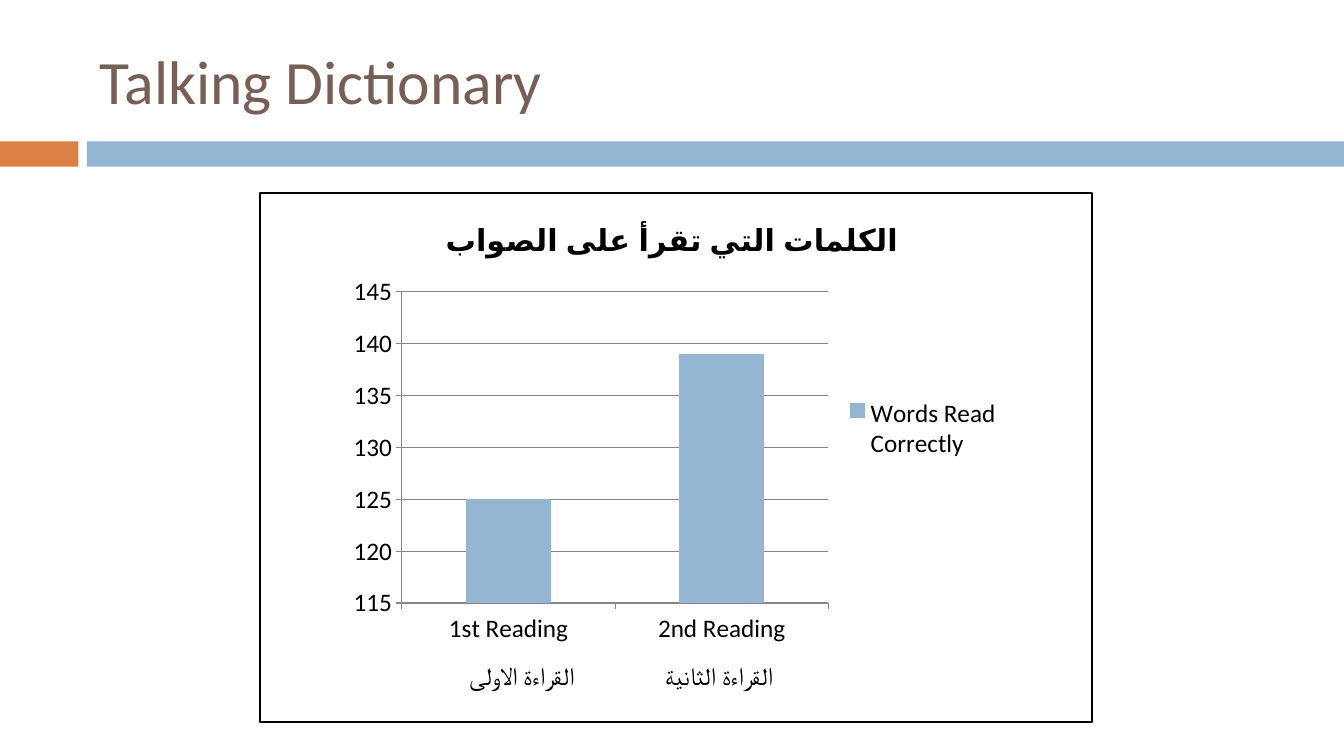
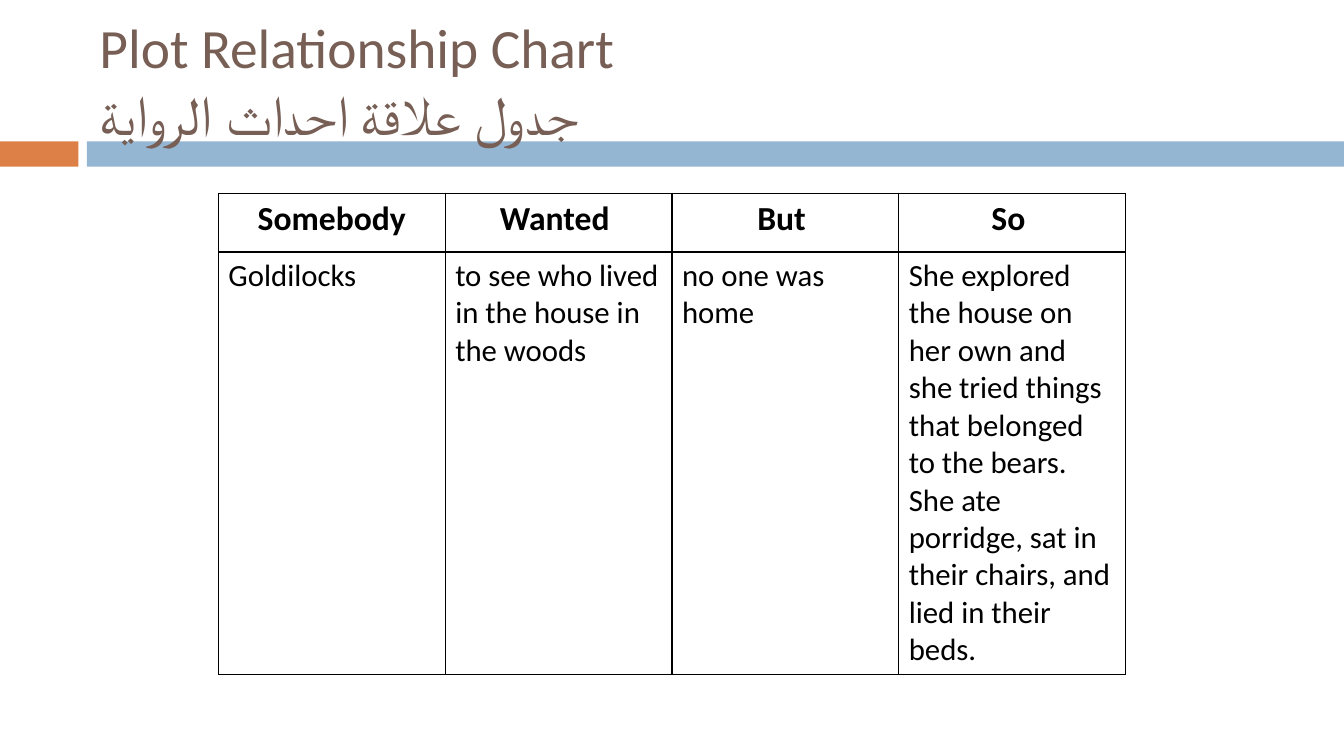
from lxml import etree
from pptx import Presentation
from pptx.chart.data import CategoryChartData
from pptx.dml.color import RGBColor
from pptx.enum import chart as charts, shapes, text
from pptx.oxml import ns
from pptx.util import Pt

BLACK = RGBColor(0x00, 0x00, 0x00)
BROWN = RGBColor(0x77, 0x5F, 0x55)
ORANGE = RGBColor(0xDD, 0x80, 0x47)
BLUE = RGBColor(0x94, 0xB6, 0xD2)
GRAY = RGBColor(0x86, 0x86, 0x86)

LATIN, ARABIC = "Calibri", "Arial"
SLIDE_WIDTH, SLIDE_HEIGHT = 960, 540
BAND_TOP, BAND_HEIGHT = 101, 18
BAND_SPLIT, BAND_GAP = 56, 6
CONTENT_TOP = 138


def box(left, top, width, height):
    return Pt(left), Pt(top), Pt(width), Pt(height)


def set_attributes(target, values):
    for name, value in values.items():
        setattr(target, name, value)


def format_font(font, size, color=BLACK, bold=False, name=LATIN):
    set_attributes(font, {"size": Pt(size), "bold": bold, "name": name})
    font.color.rgb = color


def add_rectangle(slide, bounds, fill=None, line=None, line_width=1.5):
    shape = slide.shapes.add_shape(shapes.MSO_SHAPE.RECTANGLE, *box(*bounds))
    shape.shadow.inherit = False
    if fill is None:
        shape.fill.background()
    else:
        shape.fill.solid()
        shape.fill.fore_color.rgb = fill
    if line is None:
        shape.line.fill.background()
    else:
        shape.line.color.rgb = line
        shape.line.width = Pt(line_width)


def add_text(slide, bounds, lines, size, color=BLACK, anchor=text.MSO_ANCHOR.TOP):
    """Write (wording, font name) lines into one paragraph."""
    frame = slide.shapes.add_textbox(*box(*bounds)).text_frame
    set_attributes(frame, {"word_wrap": True, "vertical_anchor": anchor})
    paragraph = frame.paragraphs[0]
    for index, (wording, font_name) in enumerate(lines):
        if index:
            paragraph.add_line_break()
        run = paragraph.add_run()
        run.text = wording
        format_font(run.font, size, color, name=font_name)


def add_titled_slide(presentation, title_lines, size):
    slide = presentation.slides.add_slide(presentation.slide_layouts[6])
    blue_left = BAND_SPLIT + BAND_GAP
    add_rectangle(slide, (0, BAND_TOP, BAND_SPLIT, BAND_HEIGHT), ORANGE)
    add_rectangle(slide, (blue_left, BAND_TOP, SLIDE_WIDTH - blue_left, BAND_HEIGHT), BLUE)
    add_text(slide, (64, 18, 856, 78), title_lines, size, BROWN, text.MSO_ANCHOR.MIDDLE)
    return slide


def add_column_chart(slide, bounds, title, categories, series_name, values):
    data = CategoryChartData()
    data.categories = categories
    data.add_series(series_name, values)
    chart = slide.shapes.add_chart(
        charts.XL_CHART_TYPE.COLUMN_CLUSTERED, *box(*bounds), data).chart
    format_font(chart.font, 18)

    chart.has_title = True
    chart.chart_title.text_frame.text = title
    chart.chart_title.include_in_layout = False
    format_font(chart.chart_title.text_frame.paragraphs[0].runs[0].font, 21.6, bold=True)

    chart.has_legend = True
    set_attributes(chart.legend, {
        "position": charts.XL_LEGEND_POSITION.RIGHT, "include_in_layout": False})

    plot = chart.plots[0]
    set_attributes(plot, {"gap_width": 150, "vary_by_categories": False})
    fill = plot.series[0].format.fill
    fill.solid()
    fill.fore_color.rgb = BLUE

    value_axis, category_axis = chart.value_axis, chart.category_axis
    set_attributes(value_axis, {
        "minimum_scale": 115, "maximum_scale": 145, "major_unit": 5,
        "has_major_gridlines": True})
    for axis in (value_axis, category_axis):
        axis.major_tick_mark = charts.XL_TICK_MARK.OUTSIDE
    for ruled in (value_axis, category_axis, value_axis.major_gridlines):
        ruled.format.line.color.rgb = GRAY
        ruled.format.line.width = Pt(0.75)


def add_cell_borders(cell, color=BLACK, width=1):
    properties = cell._tc.get_or_add_tcPr()
    for index, side in enumerate(("lnL", "lnR", "lnT", "lnB")):
        line = etree.Element(ns.qn(f"a:{side}"), w=str(Pt(width)))
        fill = etree.SubElement(line, ns.qn("a:solidFill"))
        etree.SubElement(fill, ns.qn("a:srgbClr"), val=str(color))
        properties.insert(index, line)


def add_table(slide, left, top, column_width, row_heights, rows):
    columns = len(rows[0])
    bounds = box(left, top, column_width * columns, sum(row_heights))
    table = slide.shapes.add_table(len(rows), columns, *bounds).table
    set_attributes(table, {"first_row": False, "horz_banding": False})
    for row_index, (height, wordings) in enumerate(zip(row_heights, rows)):
        table.rows[row_index].height = Pt(height)
        is_header = row_index == 0
        for column_index, wording in enumerate(wordings):
            cell = table.cell(row_index, column_index)
            cell.text = wording
            cell.fill.background()
            add_cell_borders(cell)
            paragraph = cell.text_frame.paragraphs[0]
            paragraph.alignment = text.PP_ALIGN.CENTER if is_header else text.PP_ALIGN.LEFT
            format_font(paragraph.runs[0].font, 24 if is_header else 22, bold=is_header)


def build_dictionary_slide(presentation):
    slide = add_titled_slide(presentation, [("Talking Dictionary", LATIN)], 44)
    add_rectangle(slide, (186, CONTENT_TOP, 594, 378), line=BLACK)
    add_column_chart(
        slide, (243, 146, 480, 320), "الكلمات التي تقرأ على الصواب ",
        ["1st Reading", "2nd Reading"], "Words Read Correctly", [125, 139])
    for left, label in ((328, "القراءة الاولى"), (468, "القراءة الثانية")):
        add_text(slide, (left, 468, 108, 29), [(label, LATIN)], 18)


def build_plot_slide(presentation):
    slide = add_titled_slide(presentation, [
        ("Plot Relationship Chart", LATIN), ("جدول علاقة احداث الرواية", ARABIC)], 39.6)
    add_table(slide, 156, CONTENT_TOP, 162, (42, 302), [
        ["Somebody", "Wanted ", "But ", "So "],
        ["Goldilocks", "to see who lived in the house in the woods", "no one was home",
         "She explored the house on her own and she tried things that belonged to the "
         "bears. She ate porridge, sat in their chairs, and lied in their beds."]])


def main():
    presentation = Presentation()
    set_attributes(presentation, {
        "slide_width": Pt(SLIDE_WIDTH), "slide_height": Pt(SLIDE_HEIGHT)})
    build_dictionary_slide(presentation)
    build_plot_slide(presentation)
    presentation.save("out.pptx")


if __name__ == "__main__":
    main()
